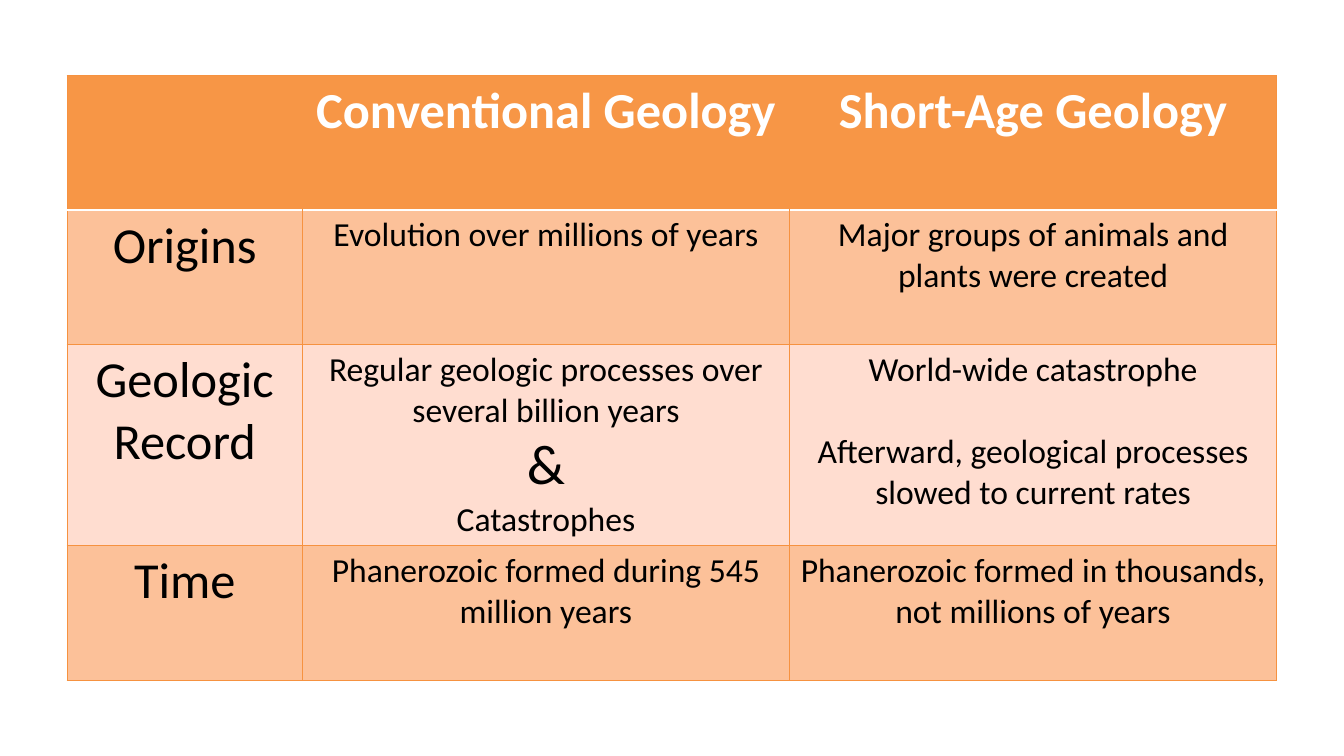
"""Build a slide comparing conventional and short-age geology in a table."""
import pptx
import pptx.dml.color
import pptx.enum.text
import pptx.oxml
import pptx.oxml.ns
import pptx.util

Pt = pptx.util.Pt
COLORS = {"header": "F79646", "band": "FCC199", "plain": "FFDDD0",
          "edge": "F69240", "white": "FFFFFF", "black": "000000"}
COL_WIDTHS = [168, 348, 348]
ROW_HEIGHTS = [96, 96, 140, 96]
ROW_FILLS = ["header", "band", "plain", "band"]
LABEL, BODY, AMPERSAND = 36, 24, 40
BLANK_LINE = 29.3
ROWS = [
    [[], [("Conventional Geology", LABEL, 0)], [("Short-Age Geology", LABEL, 0)]],
    [[("Origins", LABEL, 0)],
     [("Evolution over millions of years", BODY, 0)],
     [("Major groups of animals and plants were created", BODY, 0)]],
    [[("Geologic", LABEL, 0), ("Record", LABEL, 0)],
     [("Regular geologic processes over several billion years", BODY, 0),
      ("&", AMPERSAND, 0), ("Catastrophes", BODY, 0)],
     [("World-wide catastrophe", BODY, 0),
      ("Afterward, geological processes slowed to current rates", BODY, BLANK_LINE)]],
    [[("Time", LABEL, 0)],
     [("Phanerozoic formed during 545 million years", BODY, 0)],
     [("Phanerozoic formed in thousands, not millions of years", BODY, 0)]],
]


def rgb(name):
    return pptx.dml.color.RGBColor.from_string(COLORS[name])


def add_border(cell, side, color, width):
    ns = pptx.oxml.ns.nsdecls("a")
    fill = (f'<a:solidFill><a:srgbClr val="{COLORS[color]}"/></a:solidFill>'
            if color else "<a:noFill/>")
    ln = pptx.oxml.parse_xml(f'<a:ln{side} {ns} w="{int(Pt(width))}">{fill}</a:ln{side}>')
    cell._tc.get_or_add_tcPr().append(ln)


def style_cell(cell, row, col):
    last_col = len(COL_WIDTHS) - 1
    edges = {side: ("edge", 0.75) for side in "LRTB"}
    if row == 0:
        edges["B"] = ("white", 2)
        if col > 0:
            edges["L"] = (None, 0.75)
        if col < last_col:
            edges["R"] = (None, 0.75)
    elif row == 1:
        edges["T"] = ("white", 2)
    for side, (color, width) in edges.items():
        add_border(cell, side, color, width)
    cell.fill.solid()
    cell.fill.fore_color.rgb = rgb(ROW_FILLS[row])


def write_cell(cell, paragraphs, is_header):
    tf = cell.text_frame
    for i, (text, size, before) in enumerate(paragraphs):
        p = tf.paragraphs[0] if i == 0 else tf.add_paragraph()
        p.alignment = pptx.enum.text.PP_ALIGN.CENTER
        p.space_before = Pt(before)
        r = p.add_run()
        r.text = text
        r.font.name = "Calibri"
        r.font.size = Pt(size)
        r.font.bold = is_header
        r.font.color.rgb = rgb("white" if is_header else "black")


def add_comparison(s, left, top):
    frame = s.shapes.add_table(len(ROWS), len(COL_WIDTHS), Pt(left), Pt(top),
                               Pt(sum(COL_WIDTHS)), Pt(sum(ROW_HEIGHTS)))
    table = frame.table
    table.first_row = table.horz_banding = False
    for column, width in zip(table.columns, COL_WIDTHS):
        column.width = Pt(width)
    for row, height in enumerate(ROW_HEIGHTS):
        table.rows[row].height = Pt(height)
        for col, paragraphs in enumerate(ROWS[row]):
            cell = table.cell(row, col)
            style_cell(cell, row, col)
            write_cell(cell, paragraphs, row == 0)


def main():
    prs = pptx.Presentation()
    prs.slide_width, prs.slide_height = Pt(960), Pt(540)
    s = prs.slides.add_slide(prs.slide_layouts[6])
    add_comparison(s, 48, 54)
    prs.save("out.pptx")


if __name__ == "__main__":
    main()
